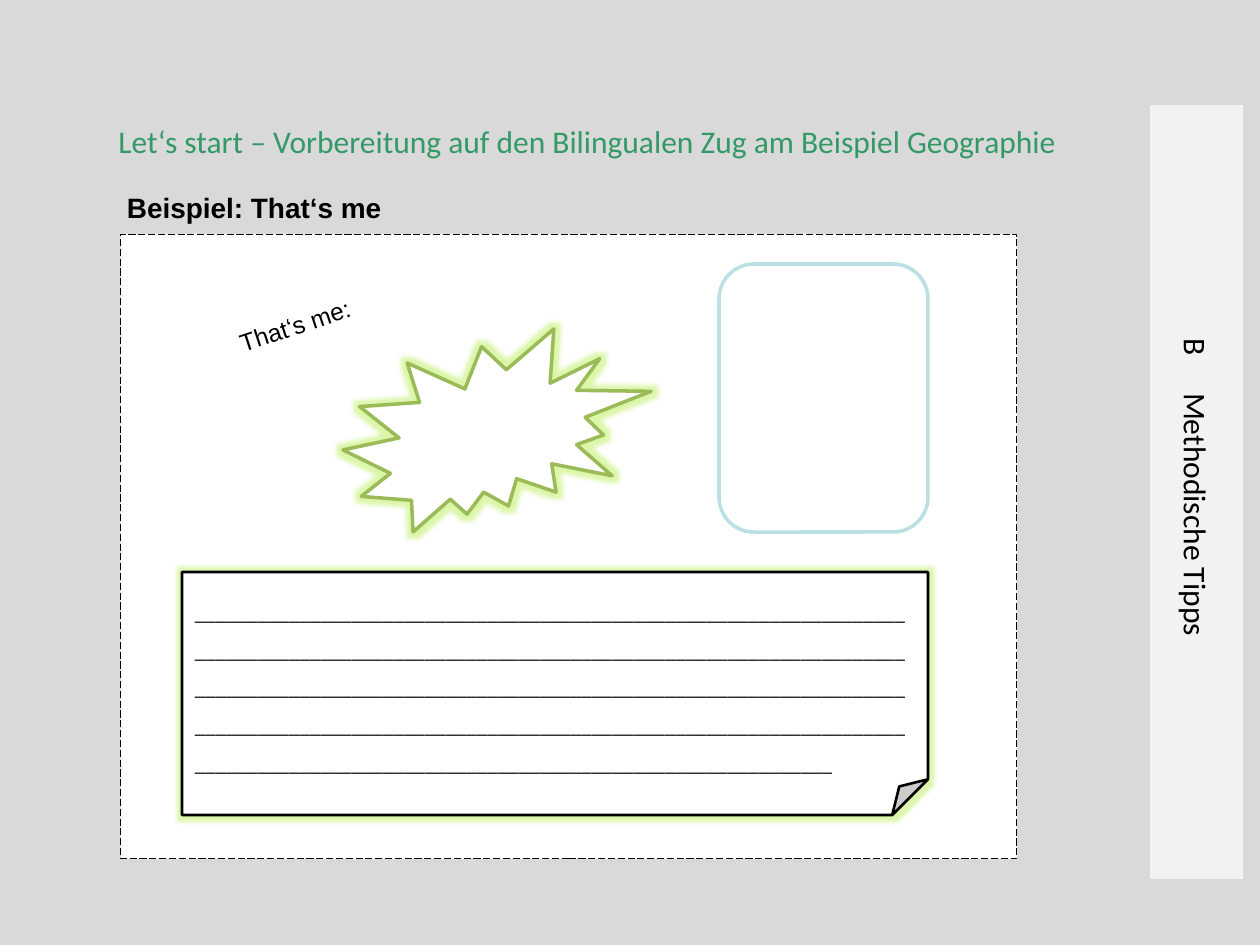
from dataclasses import dataclass
from typing import Optional

from lxml import etree
from pptx import Presentation
from pptx.dml.color import RGBColor
from pptx.enum.dml import MSO_LINE
from pptx.enum.shapes import MSO_SHAPE
from pptx.enum.text import MSO_ANCHOR, PP_ALIGN
from pptx.oxml.ns import qn
from pptx.util import Pt

EMU_PER_PX = 914400 / 126
RECT = MSO_SHAPE.RECTANGLE
ROUNDED = MSO_SHAPE.ROUNDED_RECTANGLE
BURST = MSO_SHAPE.EXPLOSION2
FOLDED = MSO_SHAPE.FOLDED_CORNER
LONG_DASH = MSO_LINE.LONG_DASH
LEFT, CENTER = PP_ALIGN.LEFT, PP_ALIGN.CENTER
MIDDLE, TOP = MSO_ANCHOR.MIDDLE, MSO_ANCHOR.TOP
INSET = 6
WRITING_LINE = "_" * 333
COLORS = {
    "background": "D9D9D9", "sidebar": "F2F2F2", "paper": "FFFFFF",
    "ink": "000000", "heading": "339966", "burst": "9BBB59",
    "photo": "BBE0E3", "glow": "A7EA2A",
}


@dataclass
class Box:
    left: int
    top: int
    width: int
    height: int


@dataclass
class Panel:
    kind: int
    box: Box
    fill: str
    line: Optional[str] = None
    line_pt: float = 0
    dash: Optional[int] = None
    glow: bool = False


@dataclass
class Lettering:
    text: str
    font: str
    size: int
    color: str = "ink"
    align: int = LEFT
    anchor: int = TOP
    bold: bool = False


def px(length: int) -> int:
    return round(length * EMU_PER_PX)


def rgb(name: str) -> RGBColor:
    return RGBColor.from_string(COLORS[name])


def place(shape, box: Box) -> None:
    shape.left, shape.top = px(box.left), px(box.top)
    shape.width, shape.height = px(box.width), px(box.height)


def add_glow(shape) -> None:
    effects = shape._element.spPr.find(qn("a:effectLst"))
    glow = etree.SubElement(effects, qn("a:glow"), rad="63500")
    color = etree.SubElement(glow, qn("a:srgbClr"), val=COLORS["glow"])
    etree.SubElement(color, qn("a:alpha"), val="40000")


def set_fold(shape, share: float) -> None:
    """Size the folded corner, for which python-pptx offers no adjustment."""
    guides = shape._element.spPr.find(qn("a:prstGeom")).find(qn("a:avLst"))
    etree.SubElement(guides, qn("a:gd"), name="adj", fmla=f"val {round(share * 100000)}")


def add_panel(slide, panel: Panel):
    shape = slide.shapes.add_shape(panel.kind, 0, 0, 0, 0)
    place(shape, panel.box)
    shape.shadow.inherit = False
    shape.fill.solid()
    shape.fill.fore_color.rgb = rgb(panel.fill)
    if panel.line:
        shape.line.color.rgb = rgb(panel.line)
        shape.line.width = Pt(panel.line_pt)
        if panel.dash:
            shape.line.dash_style = panel.dash
    else:
        shape.line.fill.background()
    if panel.glow:
        add_glow(shape)
    return shape


def write(shape, lettering: Lettering, inset: int = INSET):
    frame = shape.text_frame
    frame.word_wrap = True
    frame.vertical_anchor = lettering.anchor
    frame.margin_left = frame.margin_right = px(inset)
    frame.margin_top = frame.margin_bottom = px(inset)
    frame.text = lettering.text
    paragraph = frame.paragraphs[0]
    paragraph.alignment = lettering.align
    font = paragraph.runs[0].font
    font.name, font.size, font.bold = lettering.font, Pt(lettering.size), lettering.bold
    font.color.rgb = rgb(lettering.color)
    return paragraph


def add_label(slide, box: Box, lettering: Lettering):
    label = slide.shapes.add_textbox(0, 0, 0, 0)
    place(label, box)
    write(label, lettering)
    return label


def add_sidebar(slide) -> None:
    sidebar = add_panel(slide, Panel(RECT, Box(1150, 105, 93, 774), "sidebar"))
    chapter = write(sidebar, Lettering("B\tMethodische Tipps", "Calibri", 18, anchor=MIDDLE))
    sidebar.text_frame._txBody.bodyPr.set("vert", "vert")
    properties = chapter._p.get_or_add_pPr()
    properties.set("marL", str(px(282)))
    properties.set("indent", str(px(-55)))


def add_worksheet(slide) -> None:
    add_panel(slide, Panel(RECT, Box(121, 234, 896, 625), "paper", "ink", 0.5, LONG_DASH))
    caption = add_label(slide, Box(166, 304, 263, 58),
                        Lettering("That‘s me:", "Arial", 14, align=CENTER))
    caption.rotation = 341.8
    add_panel(slide, Panel(BURST, Box(343, 329, 308, 203), "paper", "burst", 2, glow=True))
    note = add_panel(slide, Panel(FOLDED, Box(182, 572, 746, 243), "paper", "ink", 1.5, glow=True))
    set_fold(note, 0.147)
    lines = write(note, Lettering(WRITING_LINE, "Calibri", 12, anchor=MIDDLE), inset=13)
    lines.line_spacing = 1.5
    note.text_frame.margin_top = px(17)
    note.text_frame.margin_bottom = px(INSET)
    add_panel(slide, Panel(ROUNDED, Box(719, 264, 209, 268), "paper", "photo", 2))


def main() -> None:
    deck = Presentation()
    deck.slide_width, deck.slide_height = px(1260), px(945)
    slide = deck.slides.add_slide(deck.slide_layouts[5])
    slide.background.fill.solid()
    slide.background.fill.fore_color.rgb = rgb("background")

    heading = slide.shapes.title
    place(heading, Box(25, 116, 1125, 50))
    write(heading, Lettering(
        "Let‘s start – Vorbereitung auf den Bilingualen Zug am Beispiel Geographie",
        "Calibri", 18, "heading", CENTER))
    add_label(slide, Box(121, 185, 823, 47),
              Lettering("Beispiel: That‘s me", "Arial", 16, bold=True))
    add_sidebar(slide)
    add_worksheet(slide)
    deck.save("out.pptx")


if __name__ == "__main__":
    main()
